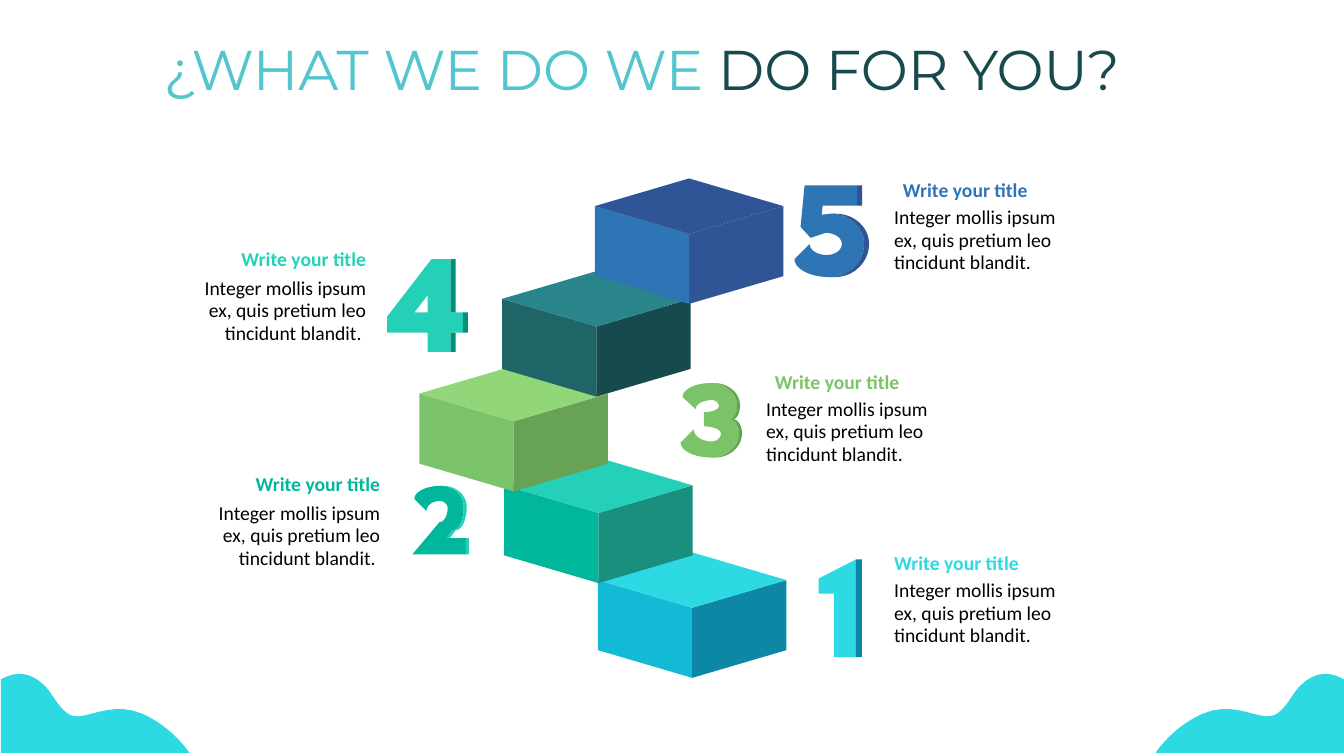
from dataclasses import dataclass

from pptx import Presentation
from pptx.dml.color import RGBColor
from pptx.enum import shapes, text
from pptx.util import Inches, Pt


@dataclass(frozen=True)
class Theme:
    heading_font: str = "Montserrat"
    body_font: str = "Calibri"
    title_size: int = 40
    text_size: int = 14
    line_spacing: int = 16
    ink: str = "000000"
    title_light: str = "53C6CD"
    title_dark: str = "174A4D"
    wave: str = "2DD9E2"
    # per step: cube left, right and top, then digit front and digit side
    steps: tuple = (
        ("13BAD6", "0C88A5", "2DD9E2", "2DD9E2", "0C88A5"),
        ("00B79C", "1A8F7D", "25D0B9", "00B79C", "25D0B9"),
        ("7AC368", "68A255", "91D678", "7AC368", "63A54E"),
        ("1F6467", "174A4D", "2A858A", "25D0B9", "00917D"),
        ("2E75B6", "2F5597", "2F5597", "2E75B6", "2F5597"),
    )


theme = Theme()
H, V = "HV"  # a quarter curve that leaves horizontally or vertically


def trace(contour):
    """Turn corners (x, y), quarter curves (x, y, H or V) and cubics into point lists."""
    chains = [[contour[0]]]
    for seg in contour[1:]:
        x0, y0 = chains[-1][-1]
        if len(seg) == 2:
            chains.append([seg])
            continue
        if len(seg) == 3:
            x, y, leaving = seg
            cx, cy = (x, y0) if leaving == H else (x0, y)
            k = 0.55
            seg = (x0 + k * (cx - x0), y0 + k * (cy - y0), x + k * (cx - x), y + k * (cy - y), x, y)
        xs, ys = (x0, *seg[0::2]), (y0, *seg[1::2])
        chain = []
        for t in (i / 10 for i in range(1, 11)):
            u = 1 - t
            weights = (u ** 3, 3 * t * u * u, 3 * t * t * u, t ** 3)
            chain.append(tuple(sum(w * c for w, c in zip(weights, cs)) for cs in (xs, ys)))
        chains.append(chain)
    return chains


def add_outline(parent, color, *contours):
    """Fill closed point lists; an upright box becomes a rectangle."""
    xs, ys = (sorted(set(axis)) for axis in zip(*contours[0]))
    if len(xs) == len(ys) == 2:
        box = (xs[0], ys[0], xs[1] - xs[0], ys[1] - ys[0])
        sp = parent.add_shape(shapes.MSO_SHAPE.RECTANGLE, *map(Inches, box))
    else:
        builder = None
        for points in contours:
            start, *rest = [(Inches(x), Inches(y)) for x, y in points]
            if builder is None:
                builder = parent.build_freeform(*start, scale=1.0)
            else:
                builder.move_to(*start)
            builder.add_line_segments(rest, close=True)
        sp = builder.convert_to_shape()
    sp.shadow.inherit = False
    sp.fill.solid()
    sp.fill.fore_color.rgb = RGBColor.from_string(color)
    sp.line.fill.background()


prs = Presentation()
prs.slide_width, prs.slide_height = Inches(13.33), Inches(7.5)
s = prs.slides.add_slide(prs.slide_layouts[5])

# Title
sp = s.shapes.title
sp.left, sp.top, sp.width, sp.height = map(Inches, (0.75, 0.29, 11.23, 0.77))
tf = sp.text_frame
tf.auto_size = text.MSO_AUTO_SIZE.NONE
p = tf.paragraphs[0]
p.alignment = text.PP_ALIGN.CENTER
for words, color in (("¿WHAT WE DO WE ", theme.title_light), ("DO FOR YOU?", theme.title_dark)):
    r = p.add_run()
    r.text = words
    r.font.name, r.font.size = theme.heading_font, Pt(theme.title_size)
    r.font.color.rgb = RGBColor.from_string(color)

# Waves in the bottom corners, mirrored about the middle of the slide
wave = sum(trace([
    (0.01, 7.47), (0.01, 6.74), (0.13, 6.67, 0.28, 6.65, 0.43, 6.79),
    (0.53, 6.88, 0.56, 7.01, 0.69, 7.09), (0.83, 7.17, 1.08, 6.94, 1.41, 7.08),
    (1.55, 7.14, 1.74, 7.27, 1.88, 7.47)]), [])
add_outline(s.shapes, theme.wave, [(13.34 - x, y) for x, y in wave])
add_outline(s.shapes, theme.wave, wave)

# Staircase of cubes, from the lowest step up
HALF, RISE, HEIGHT = 0.935, 0.275, 0.695
cube_tops = [(5.93, 5.48), (5, 4.54), (4.16, 3.63), (4.98, 2.69), (5.9, 1.77)]
for (x, y), (left_color, right_color, top_color, *_) in zip(cube_tops, theme.steps):
    west, north = (x, y + RISE), (x + HALF, y)
    east, south = (x + 2 * HALF, y + RISE), (x + HALF, y + 2 * RISE)
    base_w, base_s, base_e = ((a, b + HEIGHT) for a, b in (west, south, east))
    cube = s.shapes.add_group_shape().shapes
    add_outline(cube, left_color, [west, south, base_s, base_w])
    add_outline(cube, right_color, [base_s, base_e, east, south])
    add_outline(cube, top_color, [west, north, east, south])

# Digits: depth, first and last segment of each edge with a side, front, holes
digits = [
    (0.06, [(5, 5)],
     [(8.12, 5.74), (8.12, 5.89), (8.27, 5.89), (8.27, 6.52), (8.49, 6.52), (8.49, 5.55)], []),
    (0.03, [(1, 3), (11, 11)],
     [(4.43, 5.34), (4.49, 5.26), (4.6, 5.03, H), (4.37, 4.82, V), (4.11, 4.95, H),
      (4.23, 5.07), (4.36, 4.97, V), (4.44, 5.04, H), (4.36, 5.18, V), (4.09, 5.5),
      (4.62, 5.5), (4.62, 5.34)], []),
    (0.03, [(1, 4)],
     [(7.06, 4.54), (7.33, 4.3, H), (7.24, 4.16, V), (7.31, 4.02, H), (7.05, 3.8, V),
      (6.77, 3.94, H), (6.9, 4.06), (7.06, 3.97, V), (7.13, 4.03, H), (6.98, 4.09, V),
      (6.98, 4.23), (7.15, 4.3, H), (7.06, 4.38, V), (6.88, 4.26, H), (6.75, 4.39),
      (7.06, 4.54, V)], []),
    (0.05, [(1, 1), (3, 3), (5, 5)],
     [(4.47, 2.57), (4.47, 3.1), (4.59, 3.1), (4.59, 3.3), (4.47, 3.3), (4.47, 3.49),
      (4.24, 3.49), (4.24, 3.3), (3.84, 3.3), (3.84, 3.14), (4.28, 2.57)],
     [[(4.11, 3.1), (4.24, 2.93), (4.24, 3.1)]]),
    (0.05, [(1, 2), (6, 6)],
     [(8.23, 2.75), (8.57, 2.42, H), (8.24, 2.12, V), (8.15, 2.13), (8.16, 2.04),
      (8.5, 2.04), (8.5, 1.84), (7.98, 1.84), (7.94, 2.25), (8.04, 2.36), (8.19, 2.31),
      (8.35, 2.42, H), (8.2, 2.53, V), (8.03, 2.42, H), (7.88, 2.57), (8.23, 2.75, V)], []),
]
for (depth, edges, front, holes), (*_, front_color, side_color) in zip(digits, theme.steps):
    chains = trace(front)
    digit = s.shapes.add_group_shape().shapes
    add_outline(digit, front_color, sum(chains, []), *holes)
    for first, last in edges:
        edge = chains[first - 1][-1:] + sum(chains[first:last + 1], [])
        add_outline(digit, side_color, edge + [(x + depth, y) for x, y in reversed(edge)])

# Captions: outer edge and top; odd steps stand on the right, even ones on the left
LEFT, RIGHT = text.PP_ALIGN.LEFT, text.PP_ALIGN.RIGHT
HEAD_W, BODY_W = 1.52, 1.99
body = "Integer mollis ipsum ex, quis pretium leo tincidunt blandit."
caption_at = [(8.77, 5.42), (3.87, 4.63), (7.5, 3.62), (3.73, 2.4), (8.77, 1.72)]
for step, ((x, y), colors) in enumerate(zip(caption_at, theme.steps), 1):
    on_left = step % 2 == 0
    head = (x - HEAD_W * on_left, y, HEAD_W, 0.34)
    below = (x - BODY_W * on_left, y + (0.3 if on_left else 0.28), BODY_W, 0.77)
    for box, words, align, color, is_head in (
            (head, "Write your title", LEFT if step == 1 else RIGHT, colors[3], True),
            (below, body + " " * on_left, RIGHT if on_left else LEFT, theme.ink, False)):
        tf = s.shapes.add_textbox(*map(Inches, box)).text_frame
        tf.word_wrap = True
        tf.text = words
        p = tf.paragraphs[0]
        p.alignment = align
        if not is_head:
            p.line_spacing = Pt(theme.line_spacing)
        r = p.runs[0]
        r.font.name, r.font.size, r.font.bold = theme.body_font, Pt(theme.text_size), is_head
        r.font.color.rgb = RGBColor.from_string(color)

prs.save("out.pptx")
